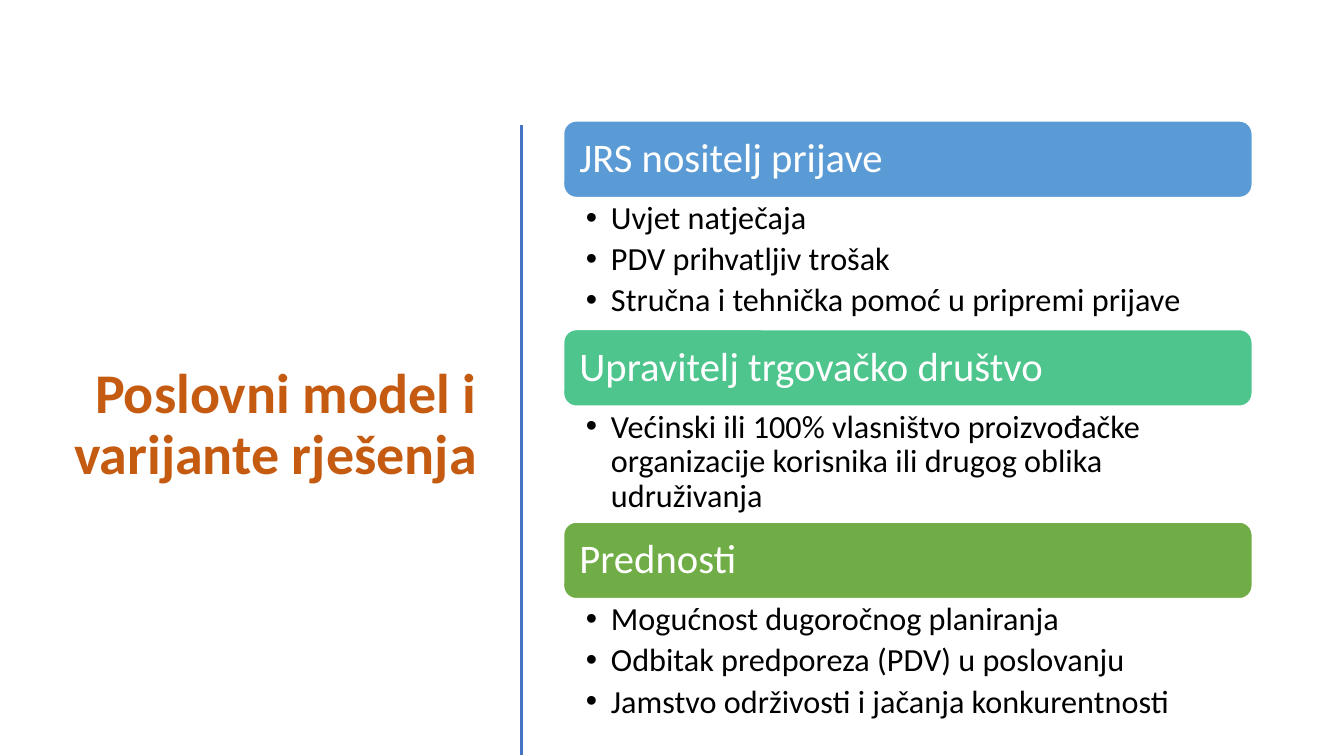
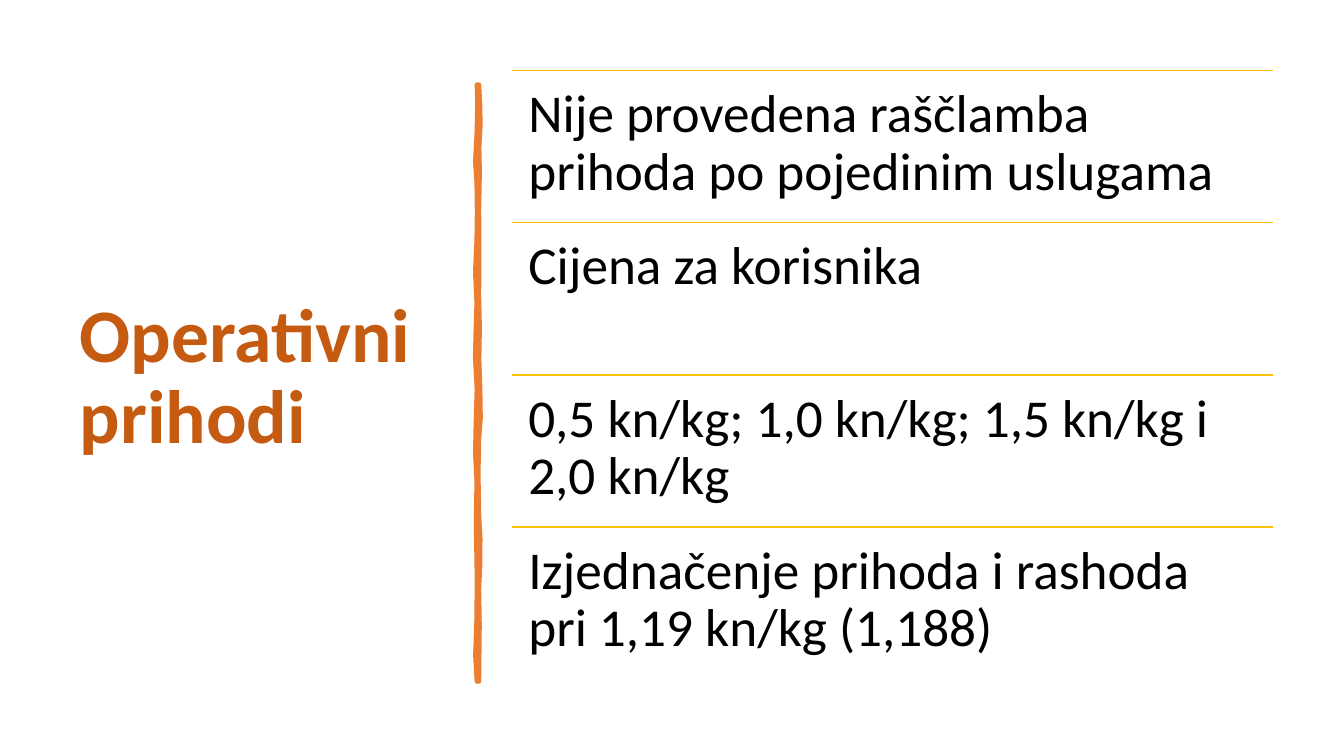
from lxml import etree
from pptx import Presentation
from pptx.dml.color import RGBColor
from pptx.enum import shapes, text
from pptx.oxml import ns
from pptx.util import Emu, Pt

# Shared look: one px is a hundredth of an inch
PX = 9144
FONT = "Calibri"
RUST, ORANGE, GOLD, BLUE = "C55A11", "ED7D31", "FFC000", "4472C4"
WHITE, BLACK = "FFFFFF", "000000"
TITLE_ONLY = 5

# Slide 1: bar top, bar colour, heading, list
MODEL = [
    (120, "5B9BD5", "JRS nositelj prijave",
     ["Uvjet natječaja", "PDV prihvatljiv trošak",
      "Stručna i tehnička pomoć u pripremi prijave"]),
    (327, "4DC58D", "Upravitelj trgovačko društvo",
     ["Većinski ili 100% vlasništvo proizvođačke organizacije "
      "korisnika ili drugog oblika udruživanja"]),
    (518, "70AD47", "Prednosti",
     ["Mogućnost dugoročnog planiranja",
      "Odbitak predporeza (PDV) u poslovanju",
      "Jamstvo održivosti i jačanja konkurentnosti"]),
]

# Slide 2: statements and the brush edges, in tenths of a px
INCOME = [
    "Nije provedena raščlamba prihoda po pojedinim uslugama",
    "Cijena za korisnika",
    "0,5 kn/kg; 1,0 kn/kg; 1,5 kn/kg i 2,0 kn/kg",
    "Izjednačenje prihoda i rashoda pri 1,19 kn/kg (1,188)",
]
BRUSH_RIGHT = [
    (4750, 840), (4762, 1050), (4764, 1250), (4752, 1460), (4757, 1700),
    (4750, 2080), (4753, 2400), (4750, 2940), (4757, 3250), (4752, 3560),
    (4762, 3850), (4766, 4150), (4750, 4360), (4744, 4700), (4750, 5100),
    (4763, 5350), (4762, 5600), (4750, 5840), (4756, 6200), (4750, 6760),
]
BRUSH_LEFT = [
    (4730, 6760), (4715, 6500), (4728, 6130), (4730, 5700), (4722, 5200),
    (4728, 4770), (4714, 4500), (4720, 4200), (4730, 3860), (4713, 3550),
    (4720, 3250), (4728, 3000), (4714, 2700), (4728, 2380), (4732, 2100),
    (4728, 1810), (4714, 1600), (4730, 1300), (4735, 1000), (4730, 840),
]


def px(length):
    return Emu(length * PX)


def colour(hex_code):
    return RGBColor.from_string(hex_code)


def write(frame, lines, size, ink=BLACK, bold=False, align=text.PP_ALIGN.LEFT,
          anchor=text.MSO_ANCHOR.TOP, insets=(10, 5, 10, 5), after=0,
          bullet=False):
    """Fill a text frame, one paragraph per line."""
    frame.word_wrap = True
    frame.auto_size = text.MSO_AUTO_SIZE.NONE
    frame.vertical_anchor = anchor
    (frame.margin_left, frame.margin_top,
     frame.margin_right, frame.margin_bottom) = map(px, insets)
    for index, line in enumerate(lines):
        paragraph = frame.add_paragraph() if index else frame.paragraphs[0]
        paragraph.alignment = align
        paragraph.line_spacing = 0.9
        paragraph.space_after = Pt(after)
        run = paragraph.add_run()
        run.text = line
        font = run.font
        font.name, font.size, font.bold = FONT, Pt(size), bold
        font.color.rgb = colour(ink)
        if bullet:
            add_bullet(paragraph)


def add_bullet(paragraph):
    properties = paragraph._p.get_or_add_pPr()
    properties.set("marL", str(px(25)))
    properties.set("indent", str(px(-25)))
    etree.SubElement(properties, ns.qn("a:buFont"), typeface="Arial")
    etree.SubElement(properties, ns.qn("a:buChar"), char="•")


def add_titled_slide(deck, title, box, size, align=text.PP_ALIGN.LEFT):
    slide = deck.slides.add_slide(deck.slide_layouts[TITLE_ONLY])
    heading = slide.shapes.title
    heading.left, heading.top, heading.width, heading.height = map(px, box)
    write(heading.text_frame, [title], size, RUST, bold=True, align=align,
          anchor=text.MSO_ANCHOR.MIDDLE)
    return slide


def add_text(slide, box, lines, size, **look):
    area = slide.shapes.add_textbox(*map(px, box))
    write(area.text_frame, lines, size, **look)


def add_rule(slide, start, end, ink, weight):
    rule = slide.shapes.add_connector(
        shapes.MSO_CONNECTOR.STRAIGHT, *map(px, start + end))
    rule.line.color.rgb = colour(ink)
    rule.line.width = Pt(weight)
    etree.SubElement(rule._element.spPr, ns.qn("a:effectLst"))


def paint(shape, fill, outline, weight):
    shape.shadow.inherit = False
    shape.fill.solid()
    shape.fill.fore_color.rgb = colour(fill)
    shape.line.color.rgb = colour(outline)
    shape.line.width = Pt(weight)


def add_bar(slide, box, label, fill):
    bar = slide.shapes.add_shape(
        shapes.MSO_SHAPE.ROUNDED_RECTANGLE, *map(px, box))
    paint(bar, fill, WHITE, 1)
    write(bar.text_frame, [label], 29, WHITE,
          anchor=text.MSO_ANCHOR.MIDDLE, insets=(12, 8, 12, 8))


def add_brush_stroke(slide):
    outline = BRUSH_RIGHT + BRUSH_LEFT
    builder = slide.shapes.build_freeform(*outline[0], scale=PX / 10)
    builder.add_line_segments(outline[1:], close=True)
    paint(builder.convert_to_shape(), ORANGE, ORANGE, 3.25)


def build_model_slide(deck):
    slide = add_titled_slide(deck, "Poslovni model i varijante rješenja",
                             (52, 117, 431, 611), 40, text.PP_ALIGN.RIGHT)
    add_rule(slide, (517, 124), (517, 749), BLUE, 2)
    left, width, bar_height, list_height = 559, 683, 76, 131
    for top, fill, label, points in MODEL:
        add_bar(slide, (left, top, width, bar_height), label, fill)
        add_text(slide, (left, top + bar_height, width, list_height), points,
                 23, insets=(22, 4, 23, 4), after=4.6, bullet=True)


def build_income_slide(deck):
    slide = add_titled_slide(deck, "Operativni prihodi",
                             (69, 70, 374, 611), 54)
    add_brush_stroke(slide)
    left, width, first_top, row_height = 508, 755, 70, 151
    for row, statement in enumerate(INCOME):
        top = first_top + row * row_height
        add_rule(slide, (left, top), (left + width, top), GOLD, 1)
        add_text(slide, (left, top, width, row_height), [statement], 38,
                 insets=(16, 16, 16, 16))


def main():
    deck = Presentation()
    deck.slide_width, deck.slide_height = px(1333), px(750)
    build_model_slide(deck)
    build_income_slide(deck)
    deck.save("out.pptx")


if __name__ == "__main__":
    main()
